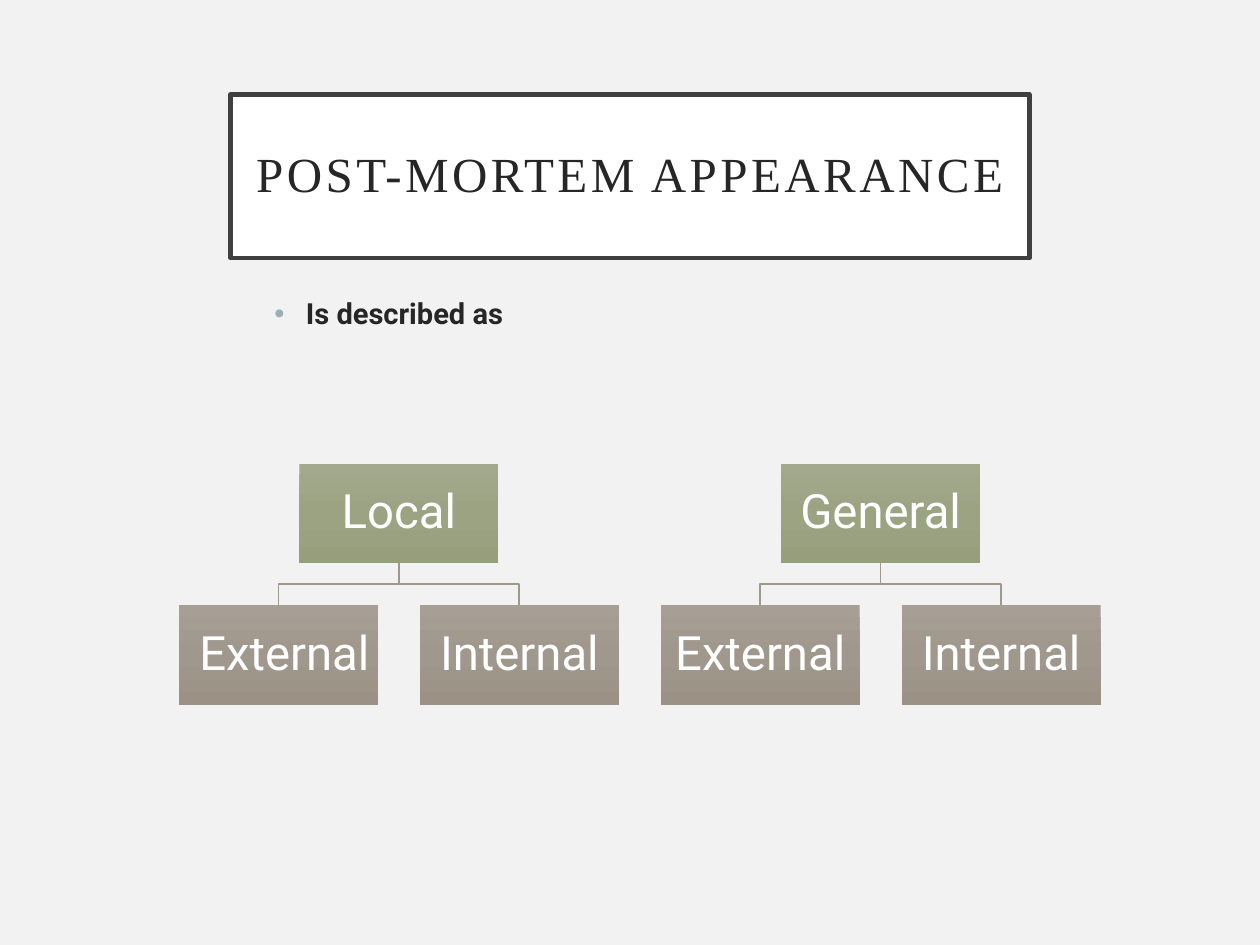
import copy

import lxml.etree
import pptx
import pptx.dml.color
import pptx.enum.shapes
import pptx.enum.text
import pptx.oxml.ns
import pptx.util

Inches, Pt = pptx.util.Inches, pptx.util.Pt
RGBColor = pptx.dml.color.RGBColor
PP_ALIGN, MSO_ANCHOR = pptx.enum.text.PP_ALIGN, pptx.enum.text.MSO_ANCHOR
RECTANGLE = pptx.enum.shapes.MSO_SHAPE.RECTANGLE
qn = pptx.oxml.ns.qn

TITLE = "POST-MORTEM APPEARANCE"
LEAD_IN = "Is described as"
BRANCHES = [
    ("Local", [" External", "Internal"]),
    ("General", ["External", "Internal"]),
]

BACKGROUND = RGBColor(0xF2, 0xF2, 0xF2)
WHITE = RGBColor(0xFF, 0xFF, 0xFF)
INK = RGBColor(0x26, 0x26, 0x26)
FRAME = RGBColor(0x40, 0x40, 0x40)
BRANCH_LINE = RGBColor(0xA0, 0x98, 0x8C)
GREEN = [RGBColor(0xA3, 0xA9, 0x8C), RGBColor(0x9C, 0xA3, 0x83), RGBColor(0x97, 0x9E, 0x7C)]
TAUPE = [RGBColor(0xA7, 0x9F, 0x95), RGBColor(0xA0, 0x98, 0x8C), RGBColor(0x9B, 0x92, 0x85)]
BULLET_HEX = "9BAFB5"

# Tree grid in inches: columns of leaves, two rows, one gap both ways
TREE_LEFT, TREE_TOP = 1.42, 3.68
BOX_W, BOX_H = 1.58, 0.79
GAP = 0.21 * BOX_W
COLUMN, ROW = BOX_W + GAP, BOX_H + GAP


def write(frame, text, size, font, color, inset=None, bold=False):
    """Put one formatted paragraph in the frame and return it."""
    frame.word_wrap = True
    if inset is not None:
        frame.margin_left = frame.margin_right = Inches(inset)
        frame.margin_top = frame.margin_bottom = Inches(inset)
    paragraph = frame.paragraphs[0]
    paragraph.text = text
    paragraph.line_spacing = 0.9
    run_font = paragraph.runs[0].font
    run_font.size, run_font.name, run_font.bold = Pt(size), font, bold
    run_font.color.rgb = color
    return paragraph


def add_box(slide, left, top, width, height):
    box = slide.shapes.add_shape(
        RECTANGLE, Inches(left), Inches(top), Inches(width), Inches(height))
    box.shadow.inherit = False
    box.text_frame.vertical_anchor = MSO_ANCHOR.MIDDLE
    return box


def fill_downwards(fill, colors):
    """Fill with three colours, evenly spread from top to bottom."""
    fill.gradient()
    fill.gradient_angle = 270
    first = fill.gradient_stops[0]._gs
    first.addnext(copy.deepcopy(first))
    for index, (stop, color) in enumerate(zip(fill.gradient_stops, colors)):
        stop.position = index / 2
        stop.color.rgb = color


def add_node(slide, label, left, top, colors):
    node = add_box(slide, left, top, BOX_W, BOX_H)
    fill_downwards(node.fill, colors)
    node.line.fill.background()
    write(node.text_frame, label, 27, "Roboto", WHITE, 0.02).alignment = PP_ALIGN.CENTER


def add_branch_line(slide, parent_x, child_x):
    top = TREE_TOP + BOX_H
    middle, bottom = top + GAP / 2, top + GAP
    builder = slide.shapes.build_freeform(Inches(parent_x), Inches(top))
    corners = [(parent_x, middle), (child_x, middle), (child_x, bottom)]
    builder.add_line_segments([(Inches(x), Inches(y)) for x, y in corners], close=False)
    branch = builder.convert_to_shape()
    branch.shadow.inherit = False
    branch.fill.background()
    branch.line.color.rgb = BRANCH_LINE
    branch.line.width = Pt(1)


def add_title(slide):
    title = add_box(slide, 1.83, 0.75, 6.34, 1.3)
    title.fill.solid()
    title.fill.fore_color.rgb = WHITE
    title.line.color.rgb = FRAME
    title.line.width = Pt(2.5)
    heading = write(title.text_frame, TITLE, 28, "Times New Roman", INK, 0.2)
    heading.alignment = PP_ALIGN.CENTER
    heading.runs[0].font._element.set("spc", "200")


def add_lead_in(slide):
    lead_in = slide.shapes.add_textbox(Inches(2.08), Inches(2.33), Inches(2.25), Inches(0.36))
    item = write(lead_in.text_frame, LEAD_IN, 16.6, "Roboto", INK, bold=True)
    item.space_before = Pt(10)
    properties = item._p.get_or_add_pPr()
    properties.set("marL", str(Inches(0.25)))
    properties.set("indent", str(Inches(-0.25)))
    bullet_color = lxml.etree.SubElement(properties, qn("a:buClr"))
    lxml.etree.SubElement(bullet_color, qn("a:srgbClr"), val=BULLET_HEX)
    lxml.etree.SubElement(properties, qn("a:buFont"), typeface="Arial")
    lxml.etree.SubElement(properties, qn("a:buChar"), char="•")


def add_tree(slide):
    branch_left = TREE_LEFT
    for parent, children in BRANCHES:
        parent_left = branch_left + COLUMN * (len(children) - 1) / 2
        for index, child in enumerate(children):
            child_left = branch_left + index * COLUMN
            add_branch_line(slide, parent_left + BOX_W / 2, child_left + BOX_W / 2)
            add_node(slide, child, child_left, TREE_TOP + ROW, TAUPE)
        add_node(slide, parent, parent_left, TREE_TOP, GREEN)
        branch_left += COLUMN * len(children)


def main():
    deck = pptx.Presentation()
    deck.slide_width, deck.slide_height = Inches(10), Inches(7.5)
    slide = deck.slides.add_slide(deck.slide_layouts[6])
    slide.background.fill.solid()
    slide.background.fill.fore_color.rgb = BACKGROUND
    add_title(slide)
    add_lead_in(slide)
    add_tree(slide)
    deck.save("out.pptx")


if __name__ == "__main__":
    main()
